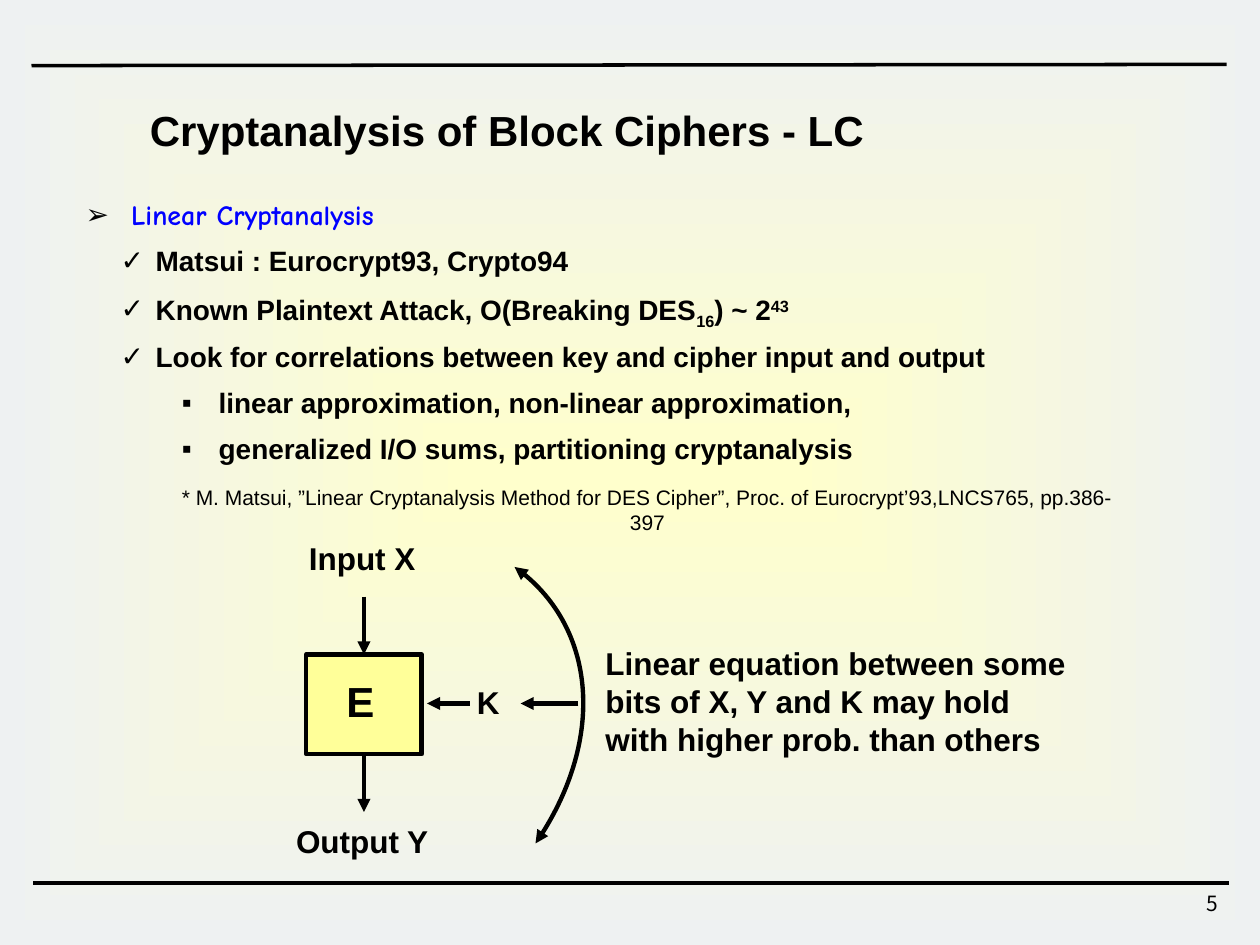
from lxml import etree
from pptx import Presentation
from pptx.dml.color import RGBColor
from pptx.enum.shapes import MSO_CONNECTOR, MSO_SHAPE
from pptx.enum.text import PP_ALIGN
from pptx.oxml import parse_xml
from pptx.oxml.ns import nsdecls, qn
from pptx.util import Pt

LINE = MSO_CONNECTOR.STRAIGHT
RECT = MSO_SHAPE.RECTANGLE
LEFT, MID, RIGHT = PP_ALIGN.LEFT, PP_ALIGN.CENTER, PP_ALIGN.RIGHT
TOP, BOTTOM = 0, 2
HEX = {"ink": "000000", "blue": "0000FF", "box": "FFFF99",
       "core": "FFFFCC", "edge": "EEF1F2"}
BODY, FUN, CJK = "Arial", "Comic Neue", "Noto Sans CJK KR"
LEVELS = [("➢", 26, 26), ("✓", 40, 20), ("▪", 76, 21)]
POINTS = [
    (0, [("Linear Cryptanalysis", 0)]),
    (1, [("Matsui : Eurocrypt93, Crypto94", 0)]),
    (1, [("Known Plaintext Attack, O(Breaking DES", 0), ("16", -25000),
         (") ~ 2", 0), ("43", 30000)]),
    (1, [("Look for correlations between key and cipher input and output", 0)]),
    (2, [("linear approximation, non-linear approximation,", 0)]),
    (2, [("generalized I/O sums, partitioning cryptanalysis", 0)]),
]


def color(name):
    return RGBColor.from_string(HEX[name])


def add_run(para, text, size, bold=True, face=BODY, ink="ink", base=0):
    run = para.add_run()
    run.text = text
    font = run.font
    font.size, font.bold, font.name = Pt(size), bold, face
    font.color.rgb = color(ink)
    props = run._r.get_or_add_rPr()
    if base:
        props.set("baseline", str(base))
    for tag in ("a:ea", "a:cs"):
        etree.SubElement(props, qn(tag)).set("typeface", face)


def add_frame(slide, x, y, w, h, pad=0, wrap=True):
    box = slide.shapes.add_textbox(Pt(x), Pt(y), Pt(w), Pt(h))
    frame = box.text_frame
    frame.word_wrap = wrap
    frame.margin_left = frame.margin_right = Pt(pad)
    frame.margin_top = frame.margin_bottom = Pt(pad / 2)
    return frame


def add_text(slide, x, y, w, h, text, size, align=LEFT, bold=True,
             face=BODY, pad=0, wrap=True):
    para = add_frame(slide, x, y, w, h, pad, wrap).paragraphs[0]
    para.alignment = align
    add_run(para, text, size, bold, face)


def add_label(slide, mid, y, text, size=18):
    width = 80
    add_text(slide, mid - width / 2, y, width, size * 1.2, text, size, MID, wrap=False)


def add_heads(shape, *ends):
    line = shape.line._get_or_add_ln()
    for end in ends:
        etree.SubElement(line, qn("a:" + end)).set("type", "triangle")


def add_line(slide, x1, y1, x2, y2, weight=2.5, arrow=True):
    line = slide.shapes.add_connector(LINE, Pt(x1), Pt(y1), Pt(x2), Pt(y2))
    line.line.color.rgb = color("ink")
    line.line.width = Pt(weight)
    if arrow:
        add_heads(line, "tailEnd")
    etree.SubElement(line._element.spPr, qn("a:effectLst"))
    return line


def add_rect(slide, x, y, w, h):
    rect = slide.shapes.add_shape(RECT, Pt(x), Pt(y), Pt(w), Pt(h))
    rect.shadow.inherit = False
    return rect


def add_back(slide, w, h):
    back = add_rect(slide, 0, 0, w, h)
    back.line.fill.background()
    grad = parse_xml(
        f'<a:gradFill {nsdecls("a")} rotWithShape="1"><a:gsLst>'
        f'<a:gs pos="0"><a:srgbClr val="{HEX["core"]}"/></a:gs>'
        f'<a:gs pos="100000"><a:srgbClr val="{HEX["edge"]}"/></a:gs></a:gsLst>'
        '<a:path path="rect"><a:fillToRect l="50000" t="50000" r="50000" b="50000"/>'
        '</a:path></a:gradFill>')
    back._element.spPr.find(qn("a:prstGeom")).addnext(grad)


def add_curve(slide, start, *knots):
    pen = slide.shapes.build_freeform(*start, scale=Pt(1))
    pen.add_line_segments(knots, close=False)
    arc = pen.convert_to_shape()
    steps = list(arc._element.iter(qn("a:lnTo")))
    trace = steps[0].getparent()
    cubic = etree.SubElement(trace, qn("a:cubicBezTo"))
    for step in steps:
        cubic.append(step[0])
        trace.remove(step)
    arc.shadow.inherit = False
    arc.fill.background()
    arc.line.color.rgb = color("ink")
    arc.line.width = Pt(2.5)
    add_heads(arc, "headEnd", "tailEnd")


def add_bullet(para, level):
    mark, left, hang = LEVELS[level]
    para.level = level
    para.line_spacing = 0.9
    para.space_before = Pt(9 if level else 0)
    props = para._p.get_or_add_pPr()
    props.set("marL", str(Pt(left)))
    props.set("indent", str(-Pt(hang)))
    tint = etree.SubElement(props, qn("a:buClr"))
    etree.SubElement(tint, qn("a:srgbClr")).set("val", HEX["ink"])
    etree.SubElement(props, qn("a:buFont")).set("typeface", BODY)
    etree.SubElement(props, qn("a:buChar")).set("char", mark)


def add_points(slide):
    frame = add_frame(slide, 49, 115, 634, 153)
    for i, (level, runs) in enumerate(POINTS):
        para = frame.add_paragraph() if i else frame.paragraphs[0]
        add_bullet(para, level)
        face, ink = (BODY, "ink") if level else (FUN, "blue")
        for text, base in runs:
            add_run(para, text, 16, face=face, ink=ink, base=base)


def add_scheme(slide):
    mid, row = 208, 402
    box = add_rect(slide, 175, 374, 66, 57)
    box.fill.solid()
    box.fill.fore_color.rgb = color("box")
    box.line.color.rgb = color("ink")
    box.line.width = Pt(2.5)
    add_label(slide, mid - 2, 386, "E", 24)
    add_label(slide, mid - 1, 308, "Input X")
    add_label(slide, mid - 1, 469.5, "Output Y")
    add_label(slide, 279, 390.5, "K")
    add_line(slide, mid, 341, mid, 374).end_connect(box, TOP)
    add_line(slide, mid, 431, mid, 464).begin_connect(box, BOTTOM)
    add_line(slide, 268.5, row, 244, row)
    add_line(slide, 330.5, row, 297.5, row)
    add_curve(slide, (294.5, 324), (340, 355.5), (345, 426), (306, 481.5))
    add_text(slide, 346, 368, 266, 65,
             "Linear equation between some bits of X, Y and K may hold "
             "with higher prob. than others", 18)


def main():
    deck = Presentation()
    deck.slide_width, deck.slide_height = Pt(720), Pt(540)
    slide = deck.slides.add_slide(deck.slide_layouts[6])
    add_back(slide, 720, 540)
    add_line(slide, 18, 37.5, 701, 36.8, 2, False)
    add_line(slide, 19, 504.7, 702, 504.7, 2, False)
    add_text(slide, 553, 505.5, 150, 24, "5", 12, RIGHT, False, CJK, 7.2)
    add_text(slide, 78.5, 56, 456, 36, "Cryptanalysis of Block Ciphers - LC", 24, pad=7.2)
    add_points(slide)
    add_scheme(slide)
    add_text(slide, 101.5, 277, 537, 29,
             "* M. Matsui, ”Linear Cryptanalysis Method for DES Cipher”, "
             "Proc. of Eurocrypt’93,LNCS765, pp.386-397", 12, MID, False)
    deck.save("out.pptx")


if __name__ == "__main__":
    main()
